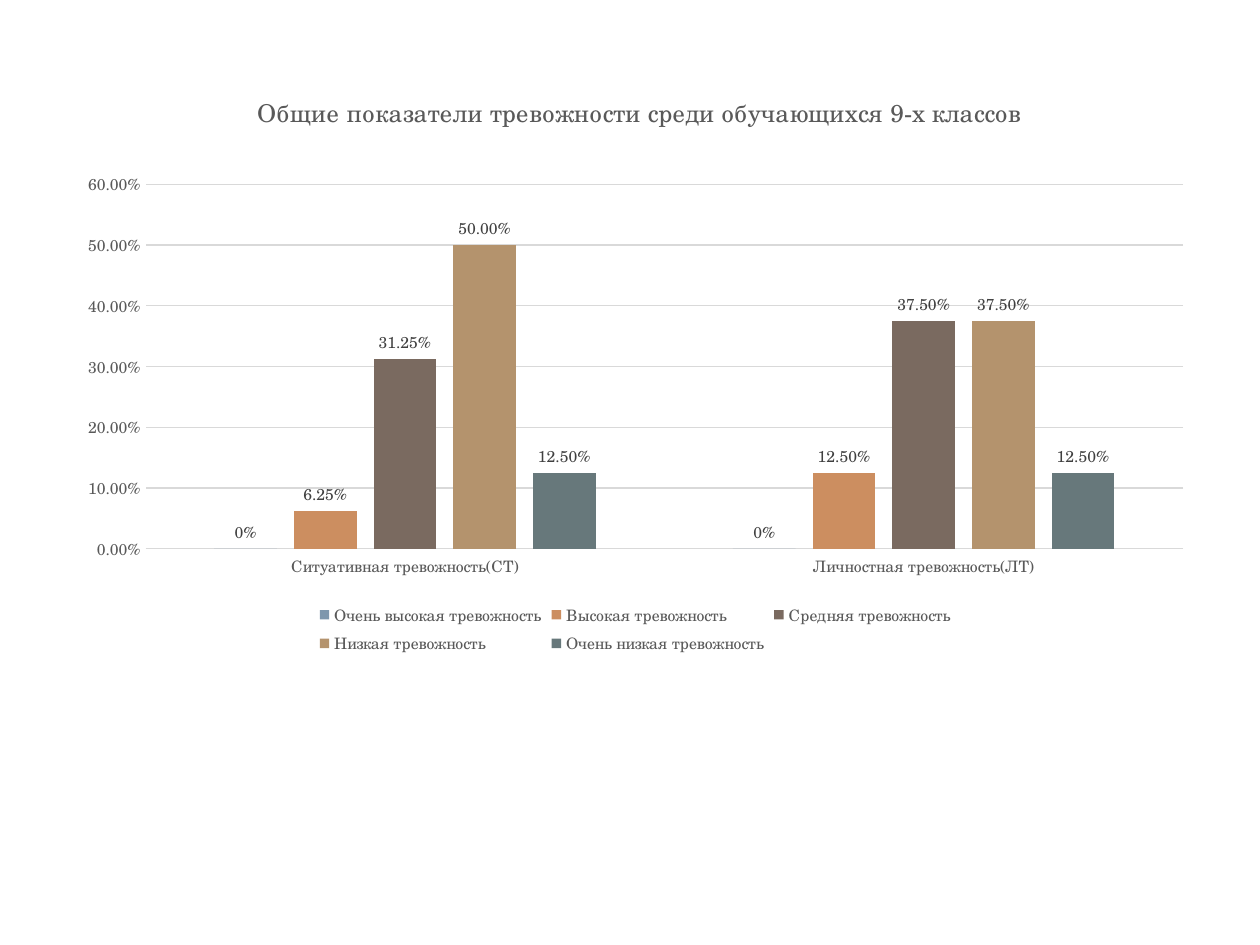
from typing import NamedTuple

from lxml import etree
from pptx import Presentation
from pptx import util as u
from pptx.chart.chart import Chart
from pptx.chart.data import CategoryChartData
from pptx.dml.color import RGBColor
from pptx.enum import chart as charts
from pptx.oxml import ns
from pptx.text.text import Font

FONT = "TeX Gyre Schola"
GREY, LABEL_GREY, LINE_GREY = "595959", "404040", "D9D9D9"
TITLE = "Общие показатели тревожности среди обучающихся 9-х классов"
CATEGORIES = ("Ситуативная тревожность(СТ)", "Личностная тревожность(ЛТ)")


class Level(NamedTuple):
    name: str
    shares: tuple[float, float]
    color: str
    label_format: str = "0.00%"


LEVELS = (
    Level("Очень высокая тревожность", (0, 0), "7E97AD", "0%"),
    Level("Высокая тревожность", (0.0625, 0.125), "CC8E60"),
    Level("Средняя тревожность", (0.3125, 0.375), "7A6A60"),
    Level("Низкая тревожность", (0.5, 0.375), "B4936D"),
    Level("Очень низкая тревожность", (0.125, 0.125), "67787B"),
)


def rgb(value: str) -> RGBColor:
    return RGBColor.from_string(value)


def style_font(font: Font, size: float, color: str) -> None:
    font.name = FONT
    font.size = u.Pt(size)
    font.bold = False
    font.color.rgb = rgb(color)


def style_line(line) -> None:
    line.color.rgb = rgb(LINE_GREY)
    line.width = u.Pt(0.75)


def place(parent, target: str = "", **fractions: float) -> None:
    """Set a manual layout in fractions of the chart's size."""
    layout = parent.find(ns.qn("c:layout"))
    if layout is None:
        layout = etree.Element(ns.qn("c:layout"))
        parent.insert(0, layout)
    manual = etree.SubElement(layout, ns.qn("c:manualLayout"))
    settings = {"layoutTarget": target} if target else {}
    settings |= {"xMode": "edge", "yMode": "edge"}
    settings |= {key: str(value) for key, value in fractions.items()}
    for tag, value in settings.items():
        etree.SubElement(manual, ns.qn(f"c:{tag}")).set("val", value)


def style_title(chart: Chart) -> None:
    chart.has_title = True
    run = chart.chart_title.text_frame.paragraphs[0].add_run()
    run.text = TITLE
    style_font(run.font, 14, GREY)
    place(chart.element.xpath("c:chart/c:title")[0], x=0.165, y=0.05)


def style_axes(chart: Chart) -> None:
    for axis in (chart.category_axis, chart.value_axis):
        axis.major_tick_mark = charts.XL_TICK_MARK.NONE
        axis.minor_tick_mark = charts.XL_TICK_MARK.NONE
        style_font(axis.tick_labels.font, 9, GREY)
    style_line(chart.category_axis.format.line)
    value_axis = chart.value_axis
    value_axis.minimum_scale, value_axis.maximum_scale = 0, 0.6
    value_axis.major_unit = 0.1
    value_axis.format.line.fill.background()
    style_line(value_axis.major_gridlines.format.line)
    value_axis.tick_labels.number_format = "0.00%"
    value_axis.tick_labels.number_format_is_linked = False


def style_series(chart: Chart) -> None:
    plot = chart.plots[0]
    plot.vary_by_categories = False
    plot.gap_width, plot.overlap = 219, -27
    for series, level in zip(plot.series, LEVELS):
        series.format.fill.solid()
        series.format.fill.fore_color.rgb = rgb(level.color)
        labels = series.data_labels
        labels.show_value = True
        labels.position = charts.XL_LABEL_POSITION.OUTSIDE_END
        labels.number_format = level.label_format
        labels.number_format_is_linked = False
        style_font(labels.font, 9, LABEL_GREY)


def add_anxiety_chart(slide) -> None:
    data = CategoryChartData(number_format="0.00%")
    data.categories = CATEGORIES
    for level in LEVELS:
        data.add_series(level.name, level.shares)
    chart = slide.shapes.add_chart(
        charts.XL_CHART_TYPE.COLUMN_CLUSTERED,
        u.Cm(1.3), u.Cm(1.12), u.Cm(23.01), u.Cm(12.19), data,
    ).chart
    style_font(chart.font, 10, "000000")
    style_title(chart)
    style_axes(chart)
    style_series(chart)
    chart.has_legend = True
    chart.legend.position = charts.XL_LEGEND_POSITION.BOTTOM
    chart.legend.include_in_layout = False
    style_font(chart.legend.font, 9, GREY)
    plot_area = chart.element.xpath("c:chart/c:plotArea")[0]
    place(plot_area, "inner", x=0.071, y=0.213, w=0.909, h=0.603)


def main() -> None:
    presentation = Presentation()
    presentation.slide_width, presentation.slide_height = u.Cm(25.4), u.Cm(19.05)
    slide = presentation.slides.add_slide(presentation.slide_layouts[6])
    add_anxiety_chart(slide)
    presentation.save("out.pptx")


if __name__ == "__main__":
    main()
